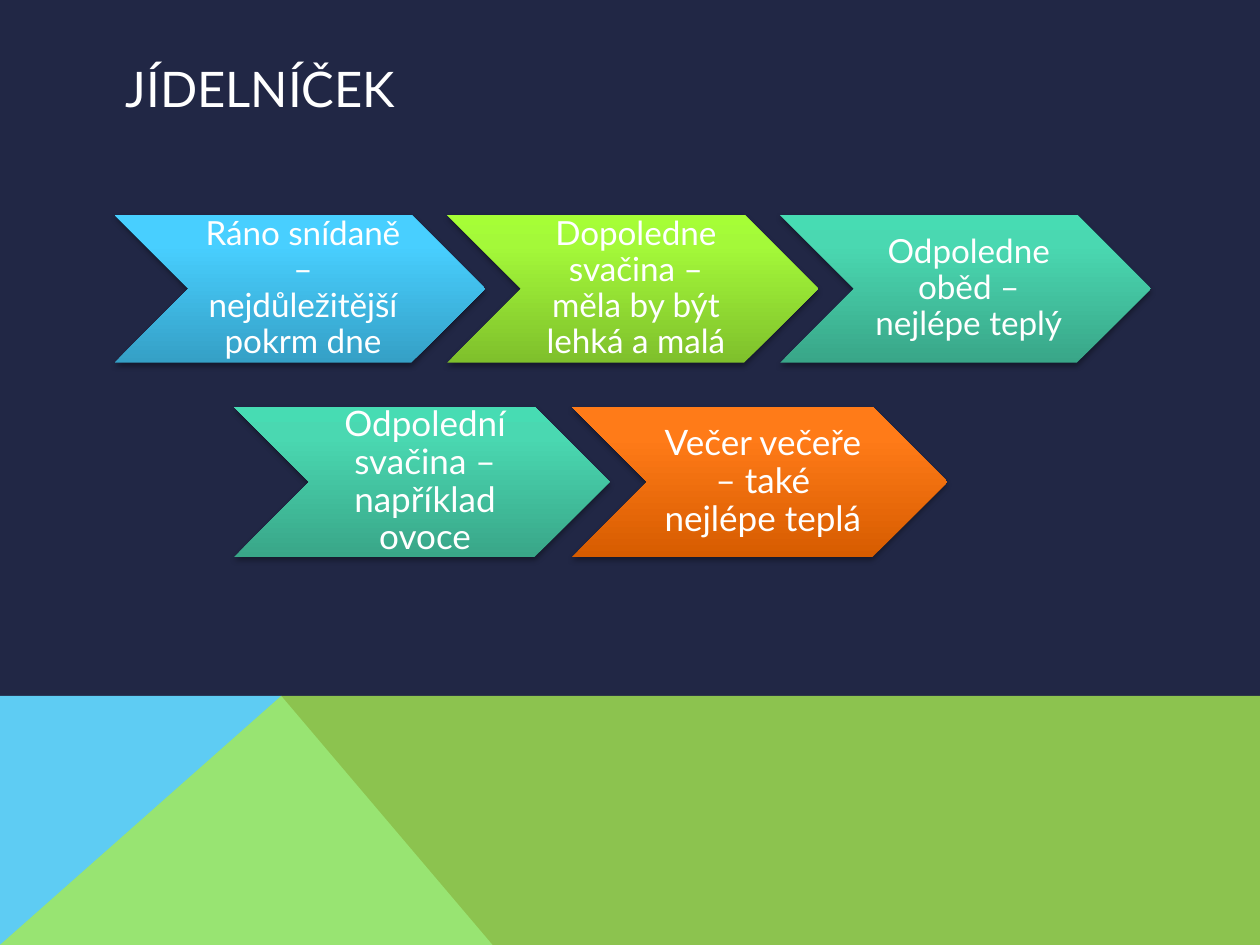
"""Build a slide with the day's meals as two rows of chevrons."""
import copy

import lxml.etree
import pptx
import pptx.dml.color
import pptx.enum.shapes
import pptx.enum.text
import pptx.oxml
import pptx.oxml.ns
import pptx.util

Cm = pptx.util.Cm
RGBColor = pptx.dml.color.RGBColor
qn = pptx.oxml.ns.qn

NAVY = RGBColor(0x21, 0x27, 0x45)
WHITE = RGBColor(0xFF, 0xFF, 0xFF)
SKY = RGBColor(0x5E, 0xCC, 0xF3)
LIME = RGBColor(0xA7, 0xEA, 0x52)
BLUES = [RGBColor(0x35, 0xA0, 0xC6), RGBColor(0x48, 0xCF, 0xFF), RGBColor(0x49, 0xCF, 0xFF)]
GREENS = [RGBColor(0x7F, 0xC0, 0x2C), RGBColor(0xA4, 0xF9, 0x39), RGBColor(0xA6, 0xFE, 0x36)]
TEALS = [RGBColor(0x39, 0xA6, 0x88), RGBColor(0x4A, 0xD8, 0xB1), RGBColor(0x47, 0xDC, 0xB3)]
ORANGES = [RGBColor(0xD7, 0x5C, 0x00), RGBColor(0xFF, 0x7B, 0x18), RGBColor(0xFF, 0x7C, 0x19)]

SHADOW = (
    '<a:effectLst xmlns:a="http://schemas.openxmlformats.org/drawingml/2006/main">'
    '<a:outerShdw blurRad="40000" dist="23000" dir="5400000" rotWithShape="0">'
    '<a:srgbClr val="000000"><a:alpha val="35000"/></a:srgbClr>'
    "</a:outerShdw></a:effectLst>"
)

ROWS = [
    (2.31, 4.33, 7.47, 2.98, 6.71, 19, [
        ("Ráno snídaně – nejdůležitější pokrm dne", BLUES),
        ("Dopoledne svačina – měla by být lehká a malá", GREENS),
        ("Odpoledne oběd – nejlépe teplý", TEALS),
    ]),
    (4.72, 8.2, 7.57, 3.03, 6.81, 20, [
        ("Odpolední svačina – například ovoce", TEALS),
        ("Večer večeře – také nejlépe teplá", ORANGES),
    ]),
]


def add_polygon(page, points, color):
    corners = [(Cm(x), Cm(y)) for x, y in points]
    builder = page.shapes.build_freeform(*corners[0], scale=1.0)
    builder.add_line_segments(corners[1:], close=True)
    polygon = builder.convert_to_shape()
    polygon.shadow.inherit = False
    polygon.fill.solid()
    polygon.fill.fore_color.rgb = color
    polygon.line.fill.background()
    return polygon


def add_text(shapes, text, left, top, width, height, size):
    box = shapes.add_textbox(Cm(left), Cm(top), Cm(width), Cm(height))
    frame = box.text_frame
    frame.word_wrap = True
    frame.vertical_anchor = pptx.enum.text.MSO_ANCHOR.MIDDLE
    frame.text = text
    font = frame.paragraphs[0].runs[0].font
    font.name = "Lato"
    font.size = pptx.util.Pt(size)
    font.color.rgb = WHITE
    return frame


deck = pptx.Presentation()
deck.slide_width = Cm(25.4)
deck.slide_height = Cm(19.05)
page = deck.slides.add_slide(deck.slide_layouts[6])
page.background.fill.solid()
page.background.fill.fore_color.rgb = NAVY

add_polygon(page, [(0, 19.05), (0, 14.03), (5.67, 14.03), (9.93, 19.05)], SKY)
field = add_polygon(page, [(0, 19.05), (5.67, 14.03), (25.4, 14.03), (25.4, 19.05)], LIME)
field_color = field.fill._xPr.find(qn("a:solidFill"))[0]
lxml.etree.SubElement(field_color, qn("a:alpha")).set("val", "80000")

add_text(page.shapes, "JÍDELNÍČEK", 2.29, 1.02, 20.88, 1.52, 28)

for left, top, width, height, step, size, meals in ROWS:
    row = page.shapes.add_group_shape()
    for index, (meal, colors) in enumerate(meals):
        x = left + index * step
        chevron = row.shapes.add_shape(
            pptx.enum.shapes.MSO_SHAPE.CHEVRON, Cm(x), Cm(top), Cm(width), Cm(height)
        )
        chevron.line.fill.background()
        chevron.fill.gradient()
        chevron.fill.gradient_angle = 90
        stops = chevron._element.spPr.find(qn("a:gradFill")).find(qn("a:gsLst"))
        stops.insert(1, copy.deepcopy(stops[0]))
        for stop, position, color in zip(chevron.fill.gradient_stops, (0, 0.8, 1), colors):
            stop.position = position
            stop.color.rgb = color
        chevron._element.spPr.append(pptx.oxml.parse_xml(SHADOW))

        frame = add_text(row.shapes, meal, x + height / 2, top, width - height, height, size)
        frame.margin_left = Cm(0.21)
        frame.margin_right = frame.margin_top = frame.margin_bottom = Cm(0.08)
        para = frame.paragraphs[0]
        para.alignment = pptx.enum.text.PP_ALIGN.CENTER
        para.line_spacing = 0.9

deck.save("out.pptx")
